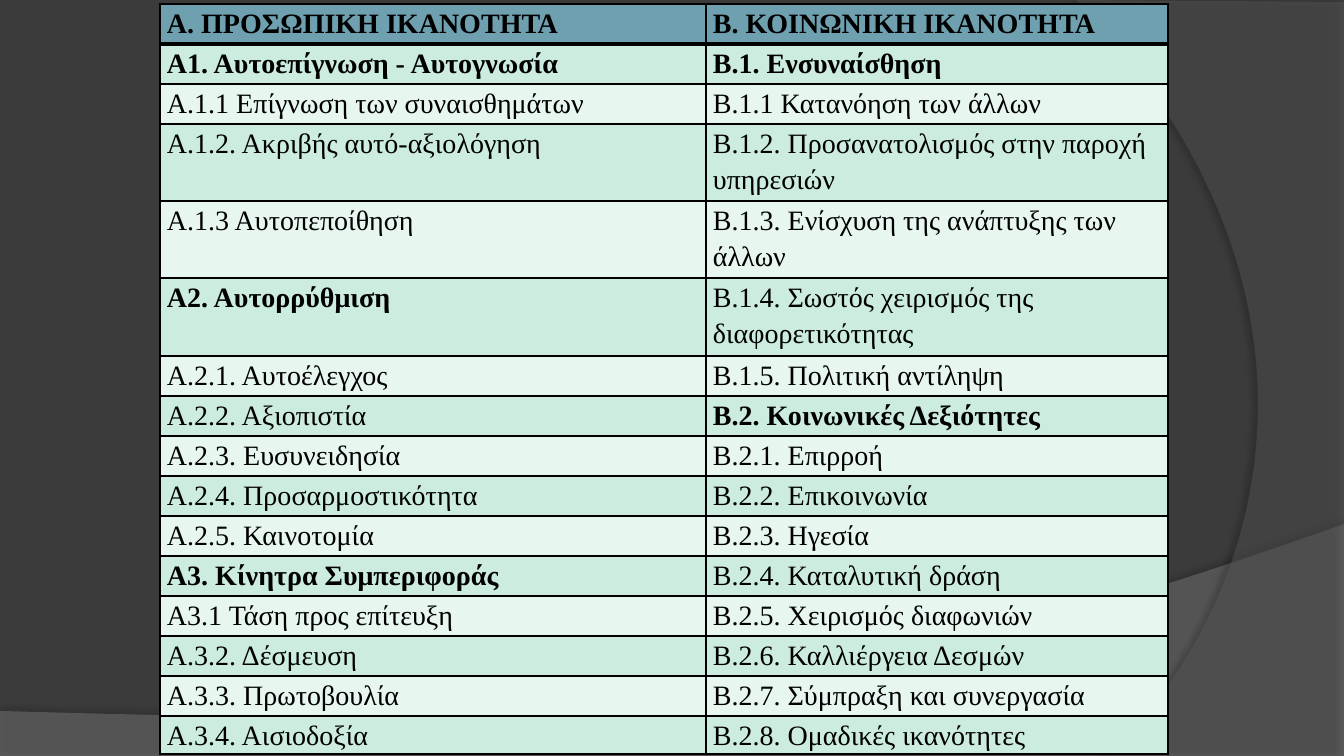
from dataclasses import dataclass

from lxml import etree
from pptx import Presentation
from pptx.dml.color import RGBColor
from pptx.oxml.ns import qn
from pptx.util import Emu, Pt

EMU_PER_PX = 9072
SLIDE_WIDTH, SLIDE_HEIGHT = 1344, 756
FONT = "Times New Roman"
COLORS = {
    "background": "3B3B3B", "wave": "7F7F7F", "swoosh": "5E5E5E",
    "header": "6EA0B0", "dark band": "CBECDE", "light band": "E7F6EF",
    "ink": "000000",
}
Point = tuple[float, float]


@dataclass(frozen=True)
class Entry:
    text: str
    bold: bool = False


@dataclass(frozen=True)
class Row:
    personal: Entry
    social: Entry
    height: int = 40


@dataclass(frozen=True)
class Backdrop:
    color: str
    opacity: int
    corners: list[Point]
    curve: tuple[Point, Point, Point]  # two controls, then the end
    shadow_opacity: int
    shadow_distance: float
    shadow_angle: int


BACKDROPS = [
    Backdrop("wave", 45, [(0, 711), (0, 757), (1344, 757), (1344, 524)],
             ((751, 735), (525, 725), (0, 711)), 35, 3.5, 270),
    Backdrop("swoosh", 40, [(1076, 0), (1344, 2), (1344, 756), (1104, 756)],
             ((1256, 624), (1368, 302), (1076, 0)), 45, 4, 180),
]
TABLE_LEFT, TABLE_TOP = 160, 4
COLUMN_WIDTHS = [546, 462]
ROWS = [
    Row(Entry("Α. ΠΡΟΣΩΠΙΚΗ ΙΚΑΝΟΤΗΤΑ", True), Entry("Β. ΚΟΙΝΩΝΙΚΗ ΙΚΑΝΟΤΗΤΑ", True)),
    Row(Entry("Α1. Αυτοεπίγνωση - Αυτογνωσία", True), Entry("Β.1. Ενσυναίσθηση", True)),
    Row(Entry("Α.1.1 Επίγνωση των συναισθημάτων"), Entry("Β.1.1 Κατανόηση των άλλων")),
    Row(Entry("Α.1.2. Ακριβής αυτό-αξιολόγηση"),
        Entry("Β.1.2. Προσανατολισμός στην παροχή υπηρεσιών"), 77),
    Row(Entry("Α.1.3 Αυτοπεποίθηση"), Entry("Β.1.3. Ενίσχυση της ανάπτυξης των άλλων"), 77),
    Row(Entry("Α2. Αυτορρύθμιση", True),
        Entry("Β.1.4. Σωστός χειρισμός της διαφορετικότητας"), 78),
    Row(Entry("Α.2.1. Αυτοέλεγχος"), Entry("Β.1.5. Πολιτική αντίληψη")),
    Row(Entry("Α.2.2. Αξιοπιστία"), Entry("Β.2. Κοινωνικές Δεξιότητες", True)),
    Row(Entry("Α.2.3. Ευσυνειδησία"), Entry("Β.2.1. Επιρροή")),
    Row(Entry("Α.2.4. Προσαρμοστικότητα"), Entry("Β.2.2. Επικοινωνία")),
    Row(Entry("Α.2.5. Καινοτομία"), Entry("Β.2.3. Ηγεσία")),
    Row(Entry("Α3. Κίνητρα Συμπεριφοράς", True), Entry("Β.2.4. Καταλυτική δράση")),
    Row(Entry("Α3.1 Τάση προς επίτευξη"), Entry("Β.2.5. Χειρισμός διαφωνιών")),
    Row(Entry("Α.3.2. Δέσμευση"), Entry("Β.2.6. Καλλιέργεια Δεσμών")),
    Row(Entry("Α.3.3. Πρωτοβουλία"), Entry("Β.2.7. Σύμπραξη και συνεργασία")),
    Row(Entry("Α.3.4. Αισιοδοξία"), Entry("Β.2.8. Ομαδικές ικανότητες"), 38),
]


def px(length: float) -> Emu:
    return Emu(round(length * EMU_PER_PX))


def rgb(name: str) -> RGBColor:
    return RGBColor.from_string(COLORS[name])


def add_child(parent, tag: str, **attributes):
    return etree.SubElement(parent, qn(tag), {key: str(value) for key, value in attributes.items()})


def curve_points(start: Point, controls: tuple[Point, Point, Point], steps: int = 60) -> list[Point]:
    """Sample a cubic curve, leaving out its start."""
    points = []
    for step in range(1, steps + 1):
        t = step / steps
        weights = ((1 - t) ** 3, 3 * t * (1 - t) ** 2, 3 * t * t * (1 - t), t ** 3)
        x, y = (sum(weight * value for weight, value in zip(weights, axis))
                for axis in zip(start, *controls))
        points.append((x, y))
    return points


def draw_backdrop(page, backdrop: Backdrop) -> None:
    corners = backdrop.corners
    builder = page.shapes.build_freeform(*(px(value) for value in corners[0]), scale=1.0)
    outline = corners[1:] + curve_points(corners[-1], backdrop.curve)
    builder.add_line_segments([(px(x), px(y)) for x, y in outline], close=True)
    shape = builder.convert_to_shape()
    shape.fill.solid()
    shape.fill.fore_color.rgb = rgb(backdrop.color)
    shape.line.fill.background()
    shape.shadow.inherit = False
    # Transparency and soft shadow
    properties = shape._element.spPr
    fill_color = properties.find(qn("a:solidFill")).find(qn("a:srgbClr"))
    add_child(fill_color, "a:alpha", val=backdrop.opacity * 1000)
    shadow = add_child(properties.find(qn("a:effectLst")), "a:outerShdw",
                       blurRad=Pt(4), dist=Pt(backdrop.shadow_distance),
                       dir=backdrop.shadow_angle * 60000, rotWithShape=0)
    shadow_color = add_child(shadow, "a:srgbClr", val=COLORS["ink"])
    add_child(shadow_color, "a:alpha", val=backdrop.shadow_opacity * 1000)


def set_borders(cell, top: int, bottom: int) -> None:
    properties = cell._tc.get_or_add_tcPr()
    widths = {"a:lnL": 1, "a:lnR": 1, "a:lnT": top, "a:lnB": bottom}
    for index, (tag, width) in enumerate(widths.items()):
        border = add_child(properties, tag, w=Pt(width))
        add_child(add_child(border, "a:solidFill"), "a:srgbClr", val=COLORS["ink"])
        properties.insert(index, border)


def fill_cell(cell, entry: Entry, color: str) -> None:
    cell.fill.solid()
    cell.fill.fore_color.rgb = rgb(color)
    cell.margin_left = cell.margin_right = px(7)
    cell.margin_top = cell.margin_bottom = 0
    cell.text = entry.text
    para = cell.text_frame.paragraphs[0]
    para.line_spacing = 1.15
    para.font.name = FONT
    para.font.size = Pt(20)
    para.font.bold = entry.bold
    para.font.color.rgb = rgb("ink")


def draw_table(page) -> None:
    frame = page.shapes.add_table(len(ROWS), len(COLUMN_WIDTHS), px(TABLE_LEFT), px(TABLE_TOP),
                                  px(sum(COLUMN_WIDTHS)), px(sum(row.height for row in ROWS)))
    table = frame.table
    table.horz_banding = False
    for column, width in zip(table.columns, COLUMN_WIDTHS):
        column.width = px(width)
    for index, row in enumerate(ROWS):
        table.rows[index].height = px(row.height)
        band = "dark band" if index % 2 else "light band"
        for column_index, entry in enumerate((row.personal, row.social)):
            cell = table.cell(index, column_index)
            fill_cell(cell, entry, band if index else "header")
            # The header stands on a thick rule
            set_borders(cell, top=3 if index == 1 else 1, bottom=3 if index == 0 else 1)


def main() -> None:
    deck = Presentation()
    deck.slide_width, deck.slide_height = px(SLIDE_WIDTH), px(SLIDE_HEIGHT)
    page = deck.slides.add_slide(deck.slide_layouts[6])
    page.background.fill.solid()
    page.background.fill.fore_color.rgb = rgb("background")
    for backdrop in BACKDROPS:
        draw_backdrop(page, backdrop)
    draw_table(page)
    deck.save("out.pptx")


if __name__ == "__main__":
    main()
